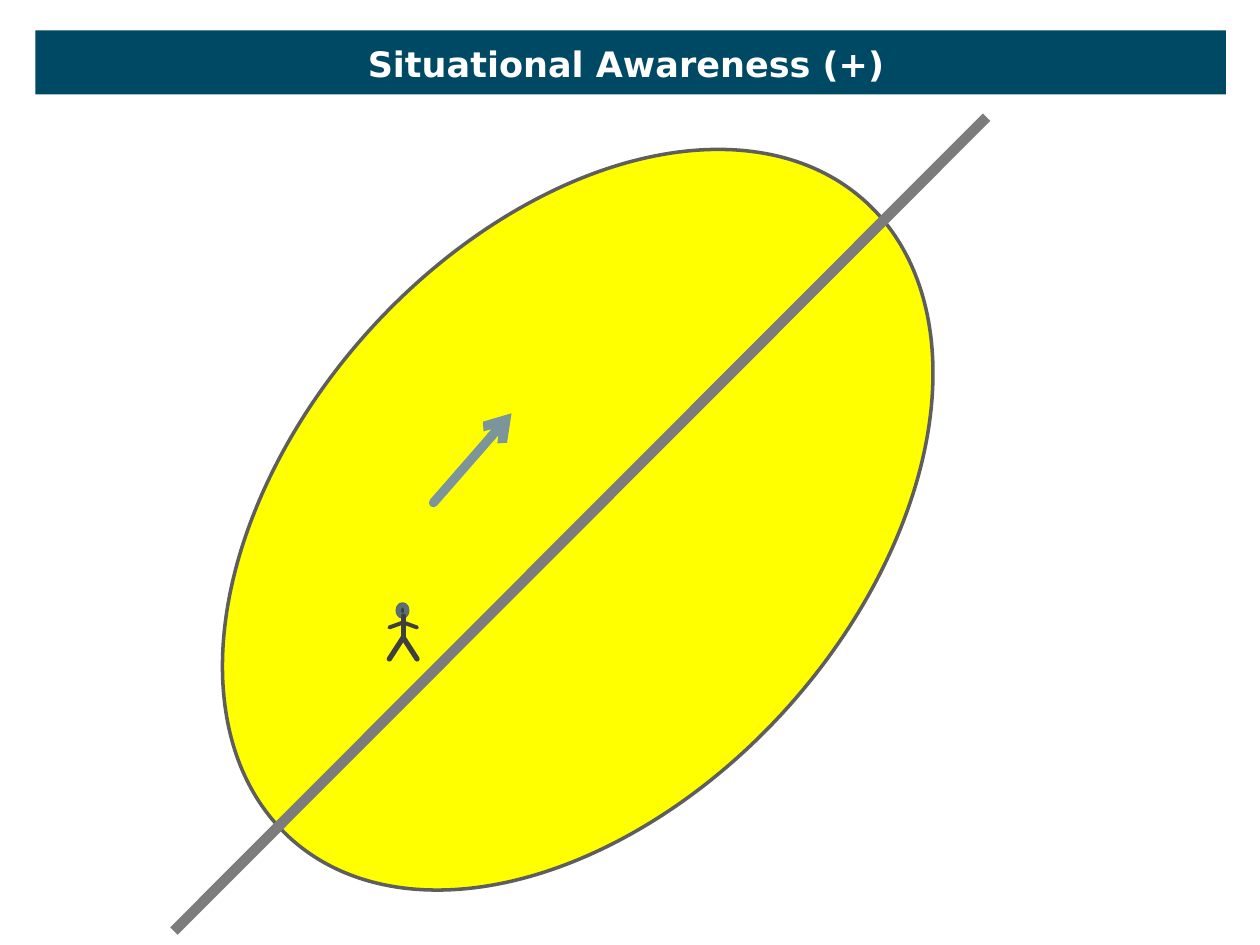
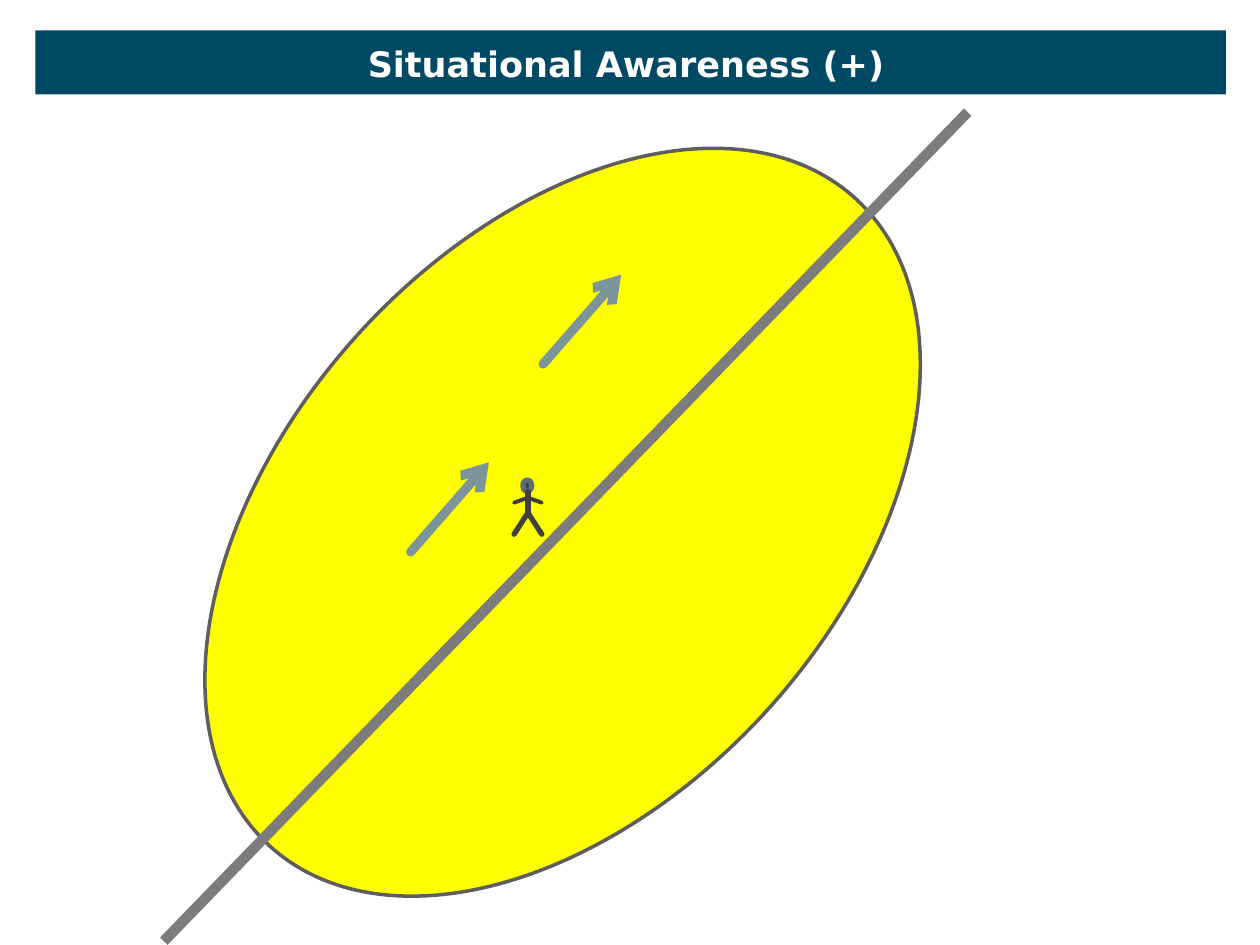
from dataclasses import dataclass

from lxml.etree import SubElement
from pptx import Presentation
from pptx.dml.color import RGBColor
from pptx.enum.shapes import MSO_CONNECTOR as Link, MSO_SHAPE as Kind
from pptx.enum.text import MSO_ANCHOR as Anchor, MSO_AUTO_SIZE as Fit, PP_ALIGN as Align
from pptx.oxml.ns import qn
from pptx.util import Emu, Pt

PX = 9144  # 100 px to the inch
FONT = "DejaVu Sans"
NAVY, WHITE, YELLOW = "004964", "FFFFFF", "FFFF00"
EDGE, ROAD, ARROW = "5E5E5E", "7C7C7C", "7C959A"
BODY, RIM = "3F3F3F", "5C6E72"
TITLE = "Situational Awareness (+)"
STEP = (62, -71)  # run of every arrow
TILT = 42

Point = tuple[int, int]
Box = tuple[int, int, int, int]


@dataclass(frozen=True)
class Scene:
    zone: Box
    road: tuple[Point, Point]
    arrows: tuple[Point, ...]
    neck: Point


SCENES = (
    Scene((235, 72, 447, 681), ((138, 739), (783, 93)), ((344, 399),), (320, 494)),
    Scene((226, 68, 441, 693), ((130, 747), (768, 89)), ((431, 289), (326, 438)), (419, 395)),
)


def px(*vals: int) -> list[Emu]:
    return [Emu(val * PX) for val in vals]


def hue(code: str) -> RGBColor:
    return RGBColor.from_string(code)


def shape(shapes, kind: Kind, box: Box, fill: str, edge: str = "", width: float = 0):
    item = shapes.add_shape(kind, *px(*box))
    item.shadow.inherit = False
    item.fill.solid()
    item.fill.fore_color.rgb = hue(fill)
    if edge:
        item.line.color.rgb = hue(edge)
        item.line.width = Pt(width)
    else:
        item.line.fill.background()
    return item


def line(shapes, start: Point, end: Point, color: str, width: float,
         cap: str = "rnd", head: bool = False) -> None:
    item = shapes.add_connector(Link.STRAIGHT, *px(*start, *end))
    item.line.color.rgb = hue(color)
    item.line.width = Pt(width)
    ln = item.line._get_or_add_ln()
    ln.set("cap", cap)
    if head:
        SubElement(ln, qn("a:tailEnd"), type="arrow")
    SubElement(item._element.spPr, qn("a:effectLst"))


def write(item, text: str, *, size: int, color: str, bold: bool = False,
          align: Align = Align.CENTER) -> None:
    frame = item.text_frame
    frame.text = text
    frame.word_wrap = False
    frame.auto_size = Fit.SHAPE_TO_FIT_TEXT
    frame.vertical_anchor = Anchor.TOP
    para = frame.paragraphs[0]
    para.alignment = align
    font = para.runs[0].font
    font.name, font.size, font.bold = FONT, Pt(size), bold
    font.color.rgb = hue(color)


def walker(shapes, neck: Point) -> None:
    x, y = neck
    hip = (x, y + 12)
    shape(shapes, Kind.FLOWCHART_CONNECTOR, (x - 4, y - 14, 7, 9), BODY, RIM, 3)
    line(shapes, (x, y - 5), hip, BODY, 3)
    for side in (-11, 11):
        line(shapes, neck, (x + side, y + 4), BODY, 2.25)
        line(shapes, hip, (x + side, y + 29), BODY, 3)


def draw(slide, scene: Scene) -> None:
    # Title
    title = slide.shapes.title
    title.left, title.top, title.width, title.height = px(278, 29, 438, 44)
    write(title, TITLE, size=20, color=WHITE, bold=True)

    # Zone of awareness and the road through it
    field = slide.shapes.add_group_shape().shapes
    shape(field, Kind.OVAL, scene.zone, YELLOW, EDGE, 2).rotation = TILT
    line(field, *scene.road, ROAD, 6, cap="flat")

    # Arrows and walker
    cast = slide.shapes.add_group_shape().shapes
    for x, y in scene.arrows:
        line(cast, (x, y), (x + STEP[0], y + STEP[1]), ARROW, 5.25, head=True)
    walker(cast, scene.neck)


def main() -> None:
    deck = Presentation()
    deck.slide_width, deck.slide_height = px(1000, 750)
    layout = deck.slide_layouts[5]
    slides = [deck.slides.add_slide(layout) for _ in SCENES]

    # Title band, shared through the layout
    band = shape(slides[0].shapes, Kind.RECTANGLE, (28, 24, 945, 51), NAVY)
    layout.shapes.element.insert(2, band.element)

    for slide, scene in zip(slides, SCENES):
        draw(slide, scene)
    deck.save("out.pptx")


if __name__ == "__main__":
    main()
